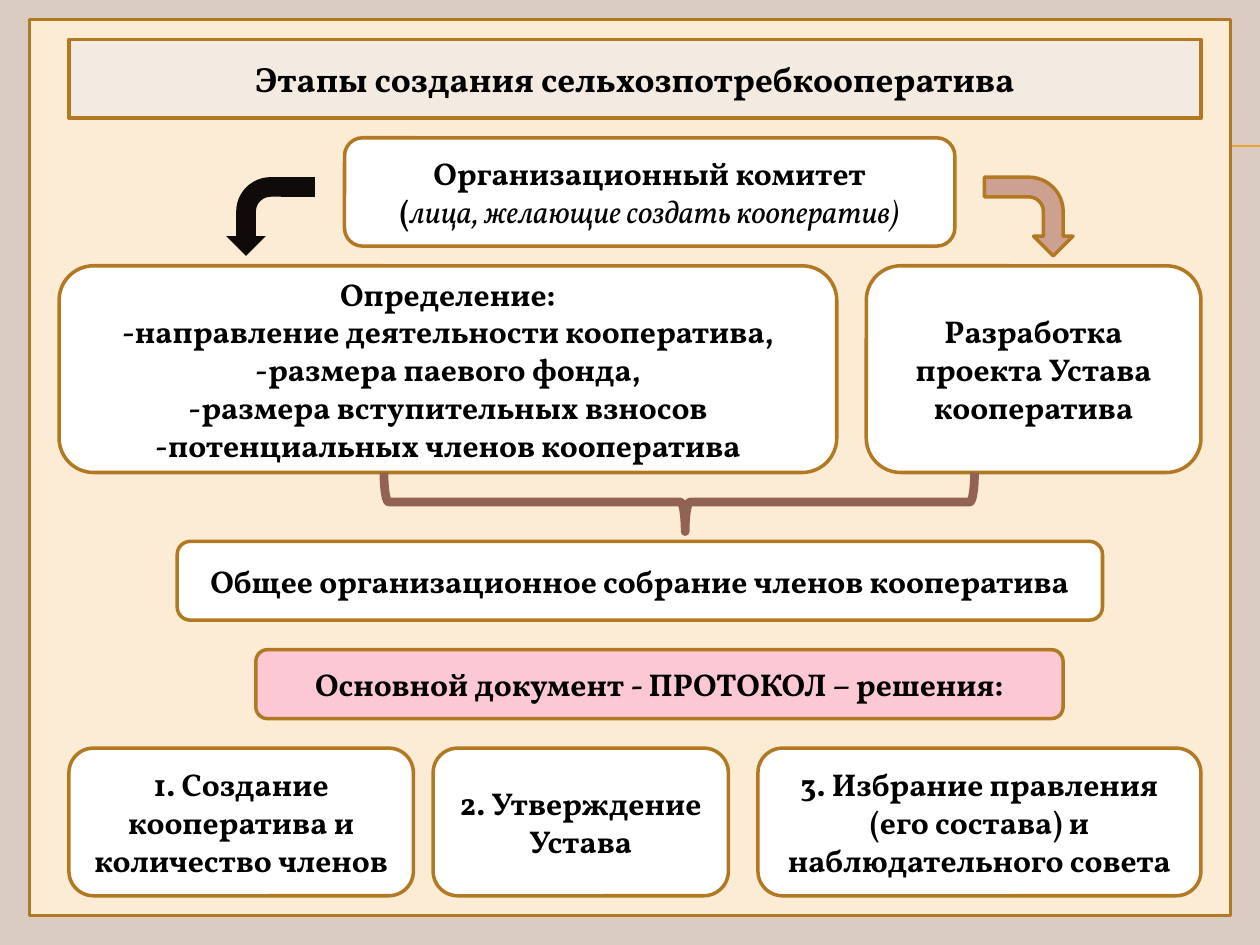
from pptx import Presentation
from pptx.dml.color import RGBColor
from pptx.enum.shapes import MSO_CONNECTOR, MSO_SHAPE
from pptx.enum.text import MSO_ANCHOR, PP_ALIGN
from pptx.oxml.ns import qn
from pptx.util import Inches, Pt
from lxml import etree

ROUND, RECT = MSO_SHAPE.ROUNDED_RECTANGLE, MSO_SHAPE.RECTANGLE
BENT, BRACE = MSO_SHAPE.BENT_ARROW, MSO_SHAPE.RIGHT_BRACE
MID, MIDDLE = PP_ALIGN.CENTER, MSO_ANCHOR.MIDDLE
STRAIGHT = MSO_CONNECTOR.STRAIGHT

BACK = RGBColor(0xDA, 0xCB, 0xC3)
CREAM = RGBColor(0xFC, 0xEC, 0xD5)
SAND = RGBColor(0xF3, 0xEA, 0xE2)
WHITE = RGBColor(0xFF, 0xFF, 0xFF)
PINK = RGBColor(0xFC, 0xC8, 0xD4)
ROSE = RGBColor(0xCC, 0xA1, 0x92)
BROWN = RGBColor(0x92, 0x62, 0x55)
GOLD = RGBColor(0xB2, 0x78, 0x22)
AMBER = RGBColor(0xF0, 0xA2, 0x2E)
DARK = RGBColor(0x0F, 0x0B, 0x0A)
BLACK = RGBColor(0, 0, 0)

CELL = Inches(10) / 128  # the slide is 128 columns by 96 rows


def draw(kind, spot, fill, edge=GOLD, width=2):
    shape = page.shapes.add_shape(kind, *[int(n * CELL) for n in spot])
    shape.shadow.inherit = False
    paint(shape, fill, edge, width)
    return shape


def paint(shape, fill, edge, width):
    """Fill and outline a shape; None leaves that part empty."""
    for part, tint in ((shape.fill, fill), (shape.line.fill, edge)):
        if tint is None:
            part.background()
        else:
            part.solid()
            part.fore_color.rgb = tint
    if edge is not None:
        shape.line.width = Pt(width)


deck = Presentation()
deck.slide_width, deck.slide_height = int(128 * CELL), int(96 * CELL)
page = deck.slides.add_slide(deck.slide_layouts[5])
page.background.fill.solid()
page.background.fill.fore_color.rgb = BACK

# Rule behind the panel
for row in (14.75, 14.85):
    rule = page.shapes.add_connector(
        STRAIGHT, int(7 * CELL), int(row * CELL), int(128 * CELL), int(row * CELL))
    rule.line.color.rgb = AMBER
    rule.line.width = Pt(0.75)
    etree.SubElement(rule._element.spPr, qn("a:effectLst"))

draw(RECT, (3, 2, 122, 91), CREAM)

# Title, brought in front of the panel
title = page.shapes.title
title.left, title.top, title.width, title.height = [
    int(n * CELL) for n in (7, 4, 115, 8)]
form = etree.SubElement(title._element.spPr, qn("a:prstGeom"), prst="roundRect")
etree.SubElement(form, qn("a:avLst"))
paint(title, SAND, GOLD, 2)
page.shapes._spTree.append(title._element)

# Each box: column, row, columns, rows; fill; lines of text
boxes = [
    ((6, 27, 79, 21), WHITE, [
        "Определение:",
        "-направление деятельности кооператива,",
        "-размера паевого фонда,",
        "-размера вступительных взносов",
        "-потенциальных членов кооператива"]),
    ((35, 14, 62, 11), WHITE, [
        "Организационный комитет",
        ("(", "лица, желающие создать кооператив)")]),
    ((88, 27, 34, 21), WHITE, ["Разработка проекта Устава кооператива"]),
    ((18, 55, 94, 8), WHITE, ["Общее организационное собрание членов кооператива"]),
    ((26, 66, 82, 7), PINK, ["Основной документ - ПРОТОКОЛ – решения:"]),
    ((7, 76, 35, 15), WHITE, ["1. Создание кооператива и количество членов"]),
    ((44, 76, 30, 15), WHITE, ["2. Утверждение Устава"]),
    ((77, 76, 45, 15), WHITE, [
        "3. Избрание правления (его состава) и наблюдательного совета"]),
]
texts = [(title, 20, ["Этапы создания сельхозпотребкооператива"])]
texts += [(draw(ROUND, spot, fill), 18, lines) for spot, fill, lines in boxes]

for shape, size, lines in texts:
    frame = shape.text_frame
    frame.word_wrap = True
    frame.vertical_anchor = MIDDLE
    for i, line in enumerate(lines):
        para = frame.paragraphs[0] if i == 0 else frame.add_paragraph()
        para.alignment = MID
        pieces = (line,) if isinstance(line, str) else line
        for j, piece in enumerate(pieces):
            run = para.add_run()
            run.text = piece
            run.font.color.rgb = BLACK
            style = {"name": "Vollkorn", "size": Pt(size),
                     "bold": j == 0, "italic": j > 0}
            for key, value in style.items():
                setattr(run.font, key, value)

# Arrows from the committee to its two tasks
right = draw(BENT, (100.5, 17.5, 8, 9), ROSE)
left = draw(BENT, (23.5, 17.5, 8, 9), DARK, None)
left._element.spPr.find(qn("a:xfrm")).set("flipV", "1")

# Brace that gathers both tasks
brace = draw(BRACE, (66, 21, 6, 60), None, BROWN, 5)
brace.adjustments[0], brace.adjustments[1] = 0.08, 0.49

for shape in (right, left, brace):
    shape.rotation = 90

deck.save("out.pptx")
